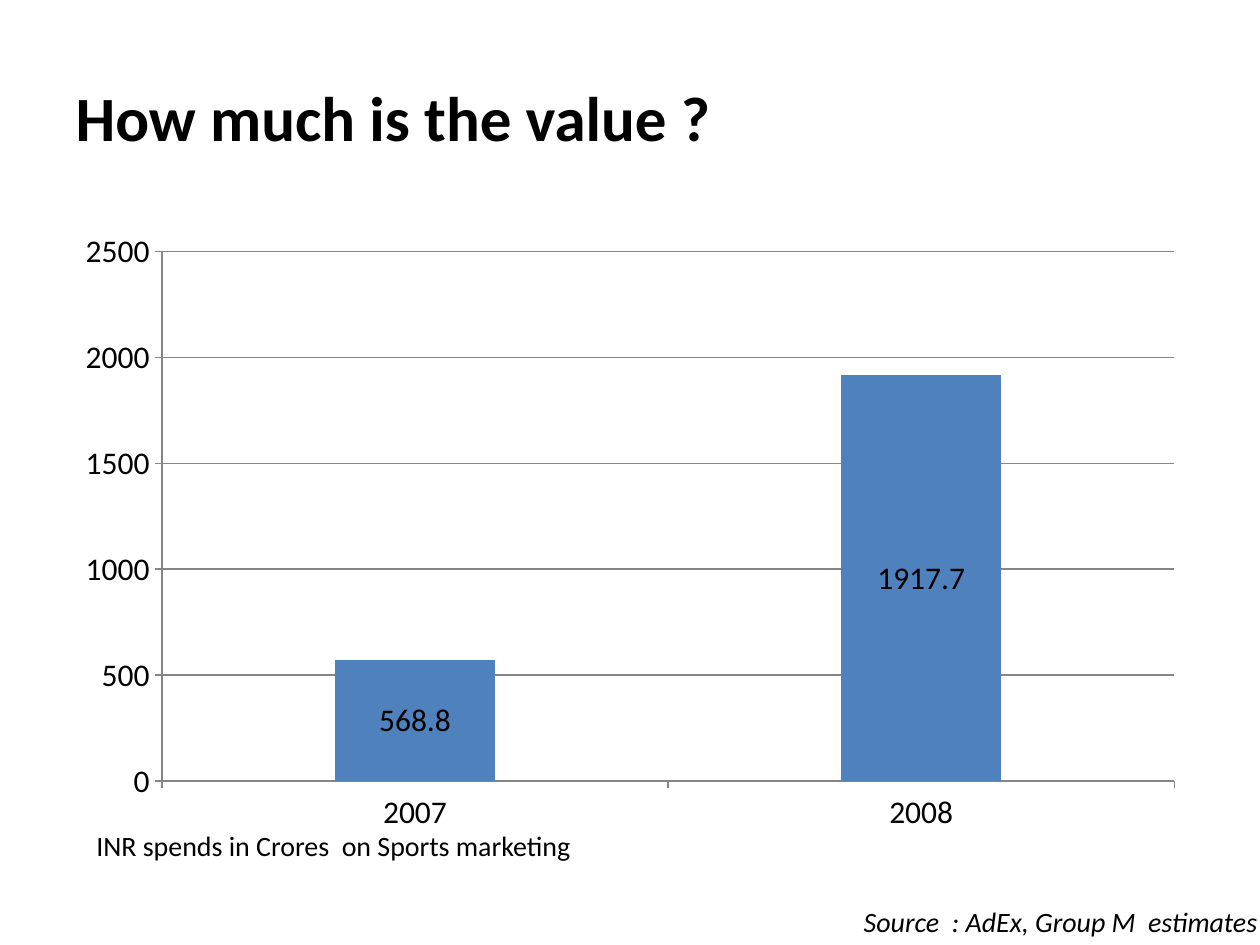
from pptx import Presentation
from pptx.chart.data import CategoryChartData
from pptx.dml.color import RGBColor
from pptx.enum.chart import XL_CHART_TYPE as ChartType, XL_LABEL_POSITION as LabelPos
from pptx.enum.chart import XL_TICK_MARK as Tick
from pptx.enum.text import MSO_ANCHOR as Anchor, PP_ALIGN as Align
from pptx.util import Emu, Pt

PX_PER_INCH = 126
FONT = "Calibri"
BLACK = RGBColor(0x00, 0x00, 0x00)
BLUE = RGBColor(0x4F, 0x81, 0xBD)
GREY = RGBColor(0x86, 0x86, 0x86)


def px(n):
    """Turn whole pixels into EMU."""
    return Emu(round(n * 914400 / PX_PER_INCH))


def set_font(font, size, bold=False, italic=False):
    """Apply the slide's typeface in black."""
    font.name, font.size = FONT, Pt(size)
    font.bold, font.italic = bold, italic
    font.color.rgb = BLACK


def fill_text(sp, text, size, anchor=Anchor.MIDDLE, align=Align.LEFT, **style):
    """Write one formatted paragraph into a shape."""
    tf = sp.text_frame
    tf.word_wrap = True
    tf.vertical_anchor = anchor
    p = tf.paragraphs[0]
    p.text = text
    p.alignment = align
    set_font(p.font, size, **style)


def add_title(s, text, left, top, width, height):
    """Place and fill the title placeholder."""
    sp = s.shapes.title
    sp.left, sp.top, sp.width, sp.height = map(px, (left, top, width, height))
    fill_text(sp, text, 36, bold=True)


def add_text(s, text, left, top, width, height, **style):
    """Add a text box with one line of small text."""
    sp = s.shapes.add_textbox(*map(px, (left, top, width, height)))
    fill_text(sp, text, 16, **style)


def style_axis(axis):
    """Give an axis grey lines and outside ticks."""
    axis.major_tick_mark = Tick.OUTSIDE
    axis.minor_tick_mark = Tick.NONE
    axis.format.line.color.rgb = GREY
    axis.format.line.width = Pt(0.75)


def add_spend_chart(s, left, top, width, height):
    """Add the column chart of yearly spends."""
    data = CategoryChartData()
    data.categories = ["2007", "2008"]
    data.add_series("Series 1", [568.8, 1917.7])
    box = map(px, (left, top, width, height))
    chart = s.shapes.add_chart(ChartType.COLUMN_STACKED, *box, data).chart
    chart.has_legend = chart.has_title = False
    set_font(chart.font, 18)

    style_axis(chart.category_axis)
    values = chart.value_axis
    style_axis(values)
    values.minimum_scale, values.maximum_scale, values.major_unit = 0, 2500, 500
    values.has_major_gridlines = True
    grid = values.major_gridlines.format.line
    grid.color.rgb, grid.width = GREY, Pt(0.75)

    plot = chart.plots[0]
    plot.gap_width, plot.overlap = 217, 100
    plot.vary_by_categories = False
    fill = plot.series[0].format.fill
    fill.solid()
    fill.fore_color.rgb = BLUE
    plot.has_data_labels = True
    labels = plot.data_labels
    labels.show_value = True
    labels.position = LabelPos.CENTER
    set_font(labels.font, 18)


def main():
    """Build the slide and save it."""
    prs = Presentation()
    prs.slide_width, prs.slide_height = px(1260), px(945)
    s = prs.slides.add_slide(prs.slide_layouts[5])
    add_title(s, "How much is the value ?", 63, 38, 1134, 157)
    add_spend_chart(s, 63, 220, 1134, 624)
    add_text(s, "INR spends in Crores  on Sports marketing", 84, 766, 1134, 158)
    add_text(s, "Source  : AdEx, Group M  estimates", 766, 898, 504, 47,
             anchor=Anchor.TOP, align=Align.RIGHT, italic=True)
    prs.save("out.pptx")


if __name__ == "__main__":
    main()
